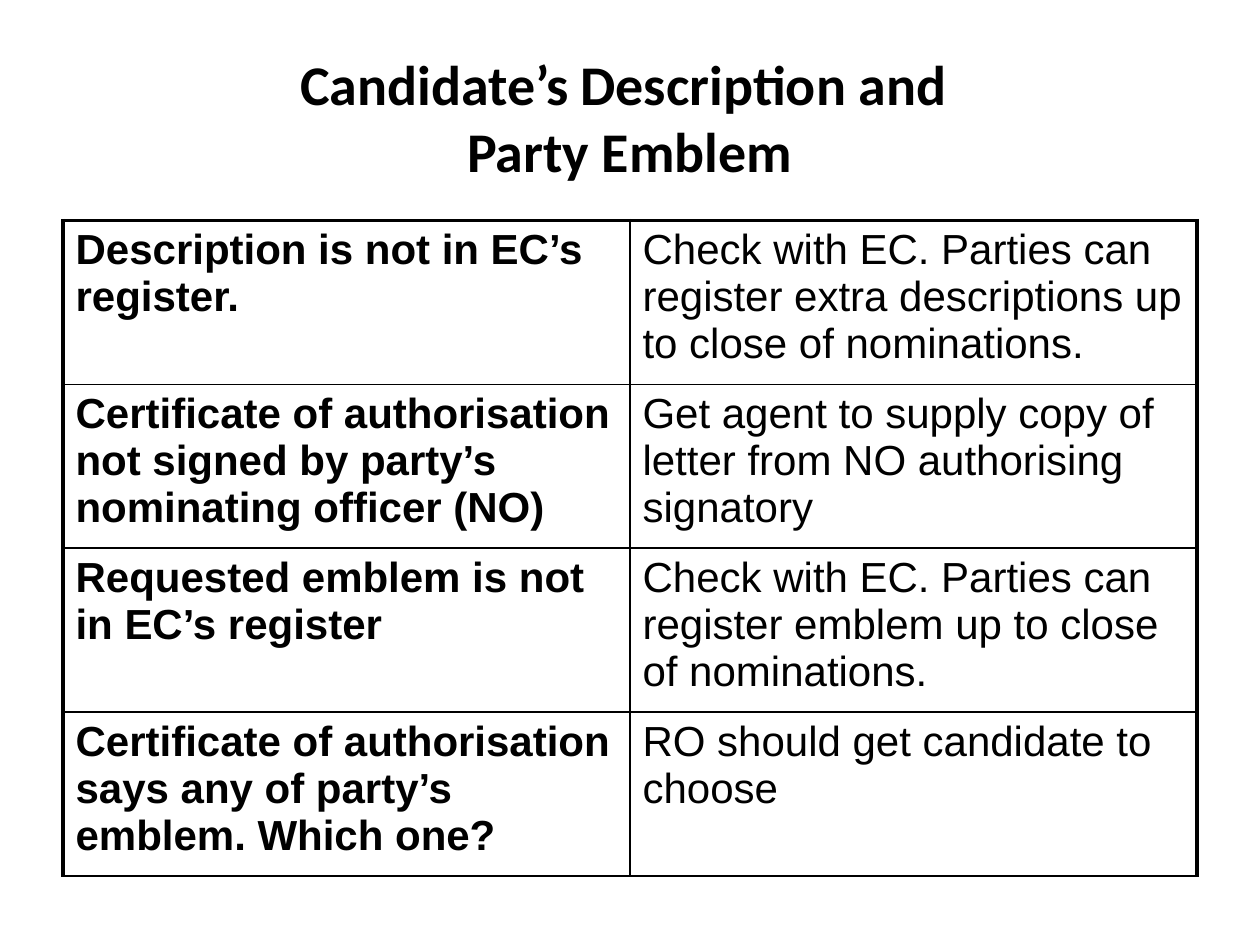
from lxml import etree
from pptx import Presentation, util as u
from pptx.dml.color import RGBColor
from pptx.enum import text
from pptx.oxml.ns import qn

ROWS = [
    ("Description is not in EC’s register.",
     "Check with EC. Parties can register extra descriptions up to close of nominations."),
    ("Certificate of authorisation not signed by party’s nominating officer (NO)",
     "Get agent to supply copy of letter from NO authorising signatory"),
    ("Requested emblem is not in EC’s register",
     "Check with EC. Parties can register emblem up to close of nominations."),
    ("Certificate of authorisation says any of party’s emblem. Which one?",
     "RO should get candidate to choose"),
]


def paint(fill, tone):
    fill.solid()
    fill.fore_color.rgb = RGBColor.from_string(tone)


def write(para, words, size=24, face="Arial", bold=False, tone="000000"):
    run = para.add_run()
    run.text = words
    font = run.font
    font.size, font.name, font.bold = u.Pt(size), face, bold
    paint(font.fill, tone)


class Deck:
    ink = "000000"
    thin, thick = 1, 2.25

    def __init__(self, wide, high):
        self.file = Presentation()
        self.file.slide_width, self.file.slide_height = u.Pt(wide), u.Pt(high)
        self.page = self.file.slides.add_slide(self.file.slide_layouts[6])
        paint(self.page.background.fill, "FFFFFF")

    def title(self, area, runs):
        frame = self.page.shapes.add_textbox(*map(u.Pt, area)).text_frame
        frame.word_wrap = True
        frame.vertical_anchor = text.MSO_ANCHOR.MIDDLE
        para = frame.paragraphs[0]
        para.alignment = text.PP_ALIGN.CENTER
        for words, size in runs:
            if words == "\n":
                para.add_line_break()
            else:
                write(para, words, size, "Calibri", True)

    def edge(self, cell, side, width):
        props = cell._tc.get_or_add_tcPr()
        line = etree.SubElement(props, qn("a:ln" + side), w=str(u.Pt(width)))
        fill = etree.SubElement(line, qn("a:solidFill"))
        etree.SubElement(fill, qn("a:srgbClr"), val=self.ink)

    def table(self, area, rows):
        cols = len(rows[0])
        grid = self.page.shapes.add_table(len(rows), cols, *map(u.Pt, area)).table
        grid.first_row = grid.horz_banding = False
        for r, row in enumerate(rows):
            for c, words in enumerate(row):
                cell = grid.cell(r, c)
                cell.margin_left = cell.margin_right = u.Pt(7.2)
                cell.margin_top = cell.margin_bottom = u.Pt(3.6)
                write(cell.text_frame.paragraphs[0], words, bold=c == 0)
                outer = {"L": c == 0, "R": c == cols - 1, "T": r == 0, "B": False}
                for side, heavy in outer.items():
                    self.edge(cell, side, self.thick if heavy else self.thin)
                paint(cell.fill, "FFFFFF")


def main():
    deck = Deck(720, 540)
    deck.title((36, 21.6, 648, 90), [
        ("Candidate’s", 32), (" ", 28), ("Description and ", 32),
        ("\n", 32), ("Party Emblem", 32)])
    deck.table((36, 126, 648, 374.4), ROWS)
    deck.file.save("out.pptx")


if __name__ == "__main__":
    main()
